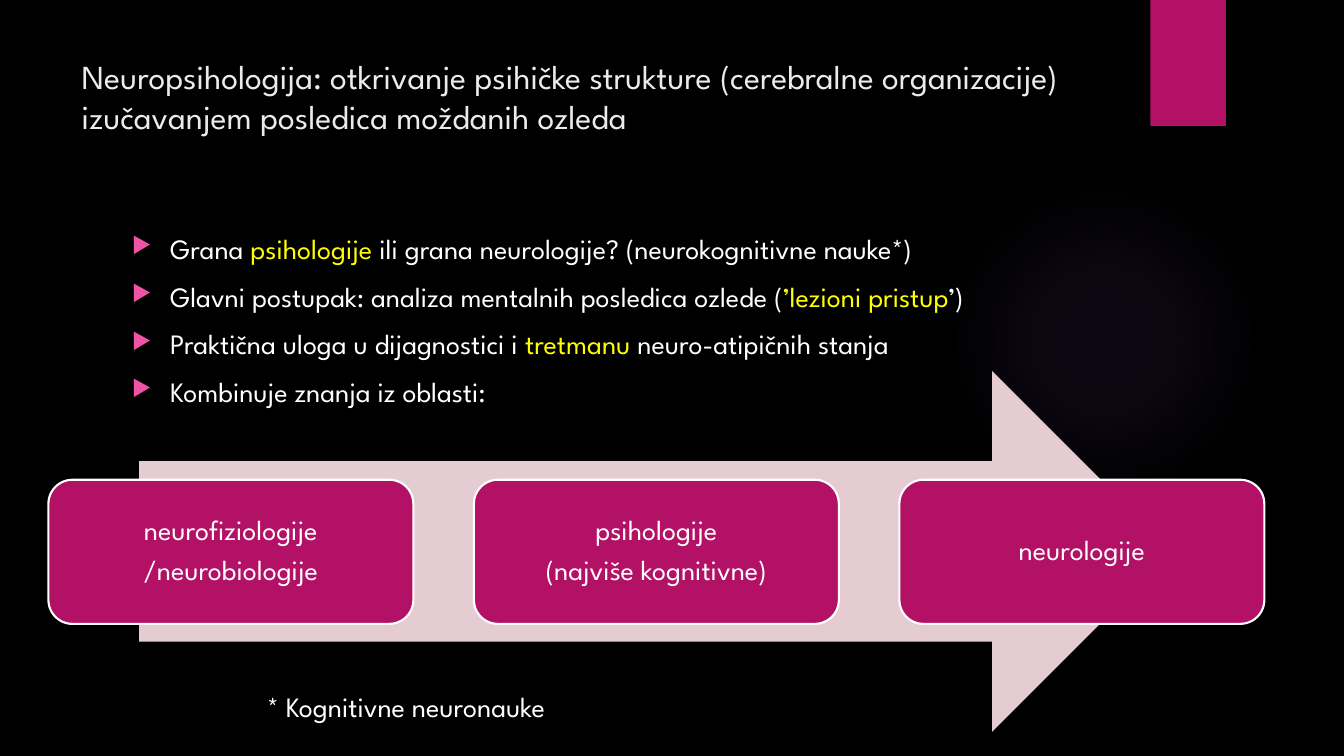
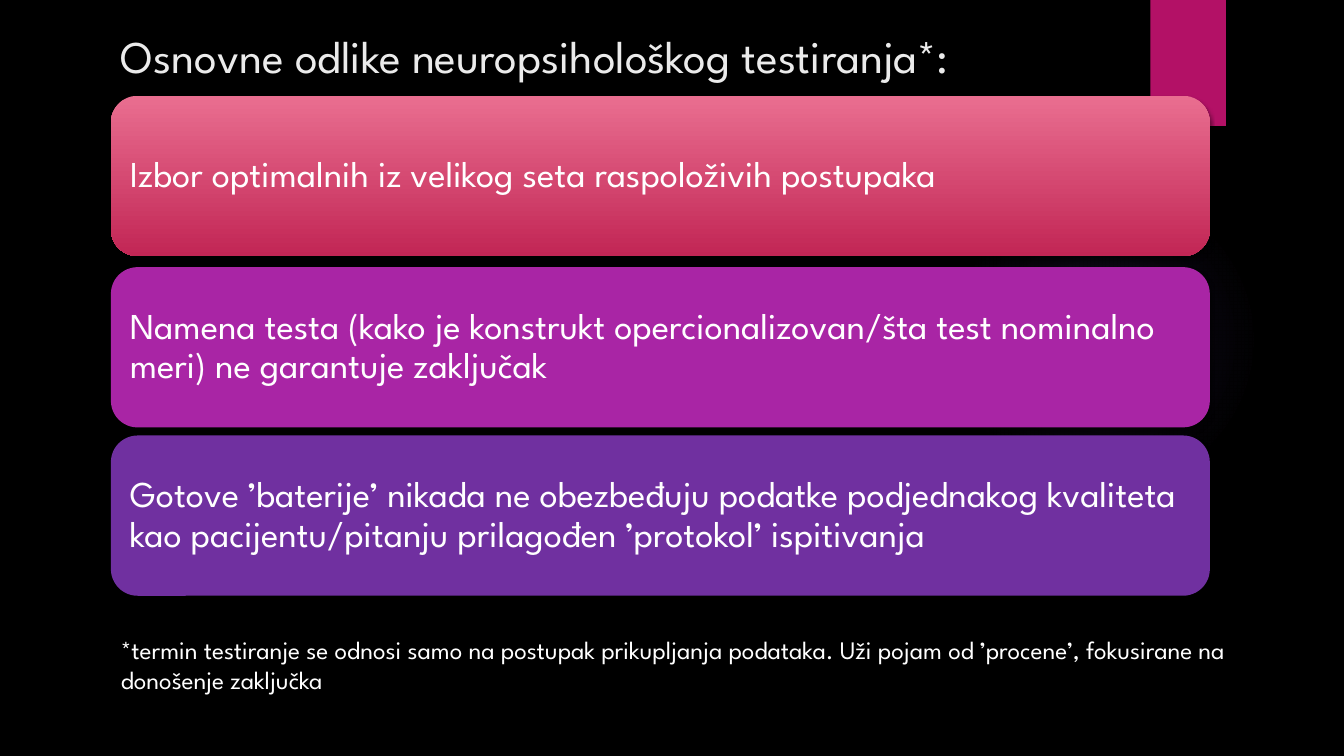
from lxml.etree import SubElement
from pptx import Presentation
from pptx.dml.color import RGBColor
from pptx.enum.shapes import MSO_SHAPE
from pptx.enum.text import MSO_ANCHOR, MSO_AUTO_SIZE, PP_ALIGN
from pptx.oxml import parse_xml
from pptx.oxml.ns import nsdecls, qn
from pptx.util import Inches, Pt

FONT = "League Spartan"
BLACK, WHITE, TITLE_GREY, YELLOW = "000000", "FFFFFF", "EBEBEB", "FFFF00"
MAGENTA, PINK, PALE_PINK, VIOLET = "B31166", "EF53A5", "E5CCD3", "9B6BF2"

BULLETS = [
    "Grana |psihologije| ili grana neurologije? (neurokognitivne nauke*)",
    "Glavni postupak: analiza mentalnih posledica ozlede (|’lezioni pristup|’)",
    "Praktična uloga u dijagnostici i |tretmanu| neuro-atipičnih stanja",
    "Kombinuje znanja iz oblasti:",
]
FIELDS = [
    "neurofiziologije\n/neurobiologije",
    "psihologije\n(najviše kognitivne)",
    "neurologije",
]
FEATURES = [
    (0.95, ["E96E90", "C22655"],
     "Izbor optimalnih iz velikog seta raspoloživih postupaka"),
    (2.65, ["A925A5"],
     "Namena testa (kako je konstrukt opercionalizovan/šta test nominalno "
     "meri) ne garantuje zaključak"),
    (4.32, ["7030A0"],
     "Gotove ’baterije’ nikada ne obezbeđuju podatke podjednakog kvaliteta "
     "kao pacijentu/pitanju prilagođen ’protokol’ ispitivanja"),
]


def rgb(value):
    """Return the colour for a hex string."""
    return RGBColor.from_string(value)


def style(font, size, color=WHITE):
    """Give a font the deck's typeface with a size and colour."""
    font.name = FONT
    font.size = Pt(size)
    font.color.rgb = rgb(color)


def add_block(slide, preset, at, colors, outline=None, shadow=False):
    """Add a preset shape with a plain or two-stop vertical fill."""
    block = slide.shapes.add_shape(preset, *map(Inches, at))
    block.shadow.inherit = False
    if len(colors) == 1:
        block.fill.solid()
        block.fill.fore_color.rgb = rgb(colors[0])
    else:
        block.fill.gradient()
        block.fill.gradient_angle = 270
        for stop, color in zip(block.fill.gradient_stops, colors):
            stop.color.rgb = rgb(color)
    if outline:
        block.line.color.rgb = rgb(outline)
        block.line.width = Pt(1.5)
    else:
        block.line.fill.background()
    if shadow:
        effects = block.element.spPr.find(qn("a:effectLst"))
        effects.append(parse_xml(
            f'<a:outerShdw {nsdecls("a")} blurRad="{Pt(3)}" dist="{Pt(2)}" '
            f'dir="5400000" rotWithShape="0"><a:srgbClr val="{BLACK}">'
            '<a:alpha val="45000"/></a:srgbClr></a:outerShdw>'))
    return block


def write_card(card, text, size, inset, align):
    """Write vertically centred text inside a rounded card."""
    frame = card.text_frame
    frame.word_wrap = True
    frame.vertical_anchor = MSO_ANCHOR.MIDDLE
    frame.margin_left = frame.margin_right = Inches(inset)
    frame.margin_top = frame.margin_bottom = Inches(inset)
    frame.text = text
    for index, paragraph in enumerate(frame.paragraphs):
        paragraph.alignment = align
        paragraph.line_spacing = 0.9
        if index:
            paragraph.space_before = Pt(size * 0.35)
        style(paragraph.font, size)


def add_note(slide, at, text, size, wrap=True):
    """Add a plain white footnote."""
    note = slide.shapes.add_textbox(*map(Inches, at))
    note.text_frame.word_wrap = wrap
    note.text_frame.text = text
    style(note.text_frame.paragraphs[0].font, size)


def add_bullets(slide, at, items, size):
    """Add a bullet list; text between bars is highlighted."""
    bullets = slide.shapes.add_textbox(*map(Inches, at))
    frame = bullets.text_frame
    frame.word_wrap = True
    for index, item in enumerate(items):
        paragraph = frame.add_paragraph() if index else frame.paragraphs[0]
        props = paragraph._p.get_or_add_pPr()
        props.set("marL", str(Inches(0.38)))
        props.set("indent", str(-Inches(0.38)))
        color = SubElement(props, qn("a:buClr"))
        SubElement(color, qn("a:srgbClr"), val=PINK)
        SubElement(props, qn("a:buSzPct"), val="80000")
        SubElement(props, qn("a:buChar"), char="▶")
        if index:
            paragraph.space_before = Pt(10)
        for part, text in enumerate(item.split("|")):
            run = paragraph.add_run()
            run.text = text
            style(run.font, size, YELLOW if part % 2 else WHITE)


def decorate_layout(layout, slide):
    """Put the background, the glow and the ribbon on the layout."""
    layout.background.fill.solid()
    layout.background.fill.fore_color.rgb = rgb(BLACK)
    glow = add_block(slide, MSO_SHAPE.OVAL, (9.41, 1.83, 3.08, 3.08), [VIOLET])
    stops = "".join(
        f'<a:gs pos="{position}000"><a:srgbClr val="{VIOLET}">'
        f'<a:alpha val="{alpha}000"/></a:srgbClr></a:gs>'
        for position, alpha in [(0, 7), (36, 6), (69, 0), (100, 0)])
    solid = glow.element.spPr.find(qn("a:solidFill"))
    solid.getparent().replace(solid, parse_xml(
        f'<a:gradFill {nsdecls("a")}><a:gsLst>{stops}</a:gsLst>'
        '<a:path path="circle"><a:fillToRect l="50000" t="50000" '
        'r="50000" b="50000"/></a:path></a:gradFill>'))
    ribbon = add_block(slide, MSO_SHAPE.RECTANGLE, (11.41, 0, 0.75, 1.25),
                       [MAGENTA], shadow=True)
    for decoration in (glow, ribbon):
        layout.shapes.element.append(decoration.element)


def add_titled_slide(deck, layout, at, text, size):
    """Add a slide and place its left-aligned title."""
    slide = deck.slides.add_slide(layout)
    title = slide.shapes.title
    title.left, title.top, title.width, title.height = map(Inches, at)
    frame = title.text_frame
    frame.text = text
    frame.word_wrap = True
    frame.auto_size = MSO_AUTO_SIZE.NONE
    frame.vertical_anchor = MSO_ANCHOR.TOP
    frame.paragraphs[0].alignment = PP_ALIGN.LEFT
    style(frame.paragraphs[0].runs[0].font, size, TITLE_GREY)
    return slide


def fill_definition(slide):
    """Fill the slide that defines neuropsychology."""
    add_bullets(slide, (1.21, 2.25, 10.27, 1.8), BULLETS, 20)
    add_block(slide, MSO_SHAPE.RIGHT_ARROW, (1.38, 3.68, 10.25, 3.58),
              [PALE_PINK])
    for index, field in enumerate(FIELDS):
        card = add_block(slide, MSO_SHAPE.ROUNDED_RECTANGLE,
                         (0.48 + index * 4.22, 4.76, 3.62, 1.43),
                         [MAGENTA], outline=WHITE)
        write_card(card, field, 20, 0.08, PP_ALIGN.CENTER)
    add_note(slide, (2.55, 6.79, 3.55, 0.44), "* Kognitivne neuronauke", 20,
             wrap=False)


def fill_testing(slide):
    """Fill the slide on the features of testing."""
    for top, colors, feature in FEATURES:
        card = add_block(slide, MSO_SHAPE.ROUNDED_RECTANGLE,
                         (1.1, top, 10.9, 1.59), colors, shadow=True)
        write_card(card, feature, 26, 0.11, PP_ALIGN.LEFT)
    add_note(slide, (1.1, 6.24, 11.8, 0.71),
             "*termin testiranje se odnosi samo na postupak prikupljanja "
             "podataka. Uži pojam od ’procene’, fokusirane na donošenje "
             "zaključka", 18)


def main():
    """Build and save the deck."""
    deck = Presentation()
    deck.slide_width, deck.slide_height = Inches(13.33), Inches(7.5)
    layout = deck.slide_layouts[5]
    definition = add_titled_slide(
        deck, layout, (0.71, 0.5, 11.08, 1.53),
        "Neuropsihologija: otkrivanje psihičke strukture (cerebralne "
        "organizacije) izučavanjem posledica moždanih ozleda", 24)
    decorate_layout(layout, definition)
    fill_definition(definition)
    testing = add_titled_slide(
        deck, layout, (1.1, 0.29, 10.05, 0.6),
        "Osnovne odlike neuropsihološkog testiranja*:", 32.4)
    testing.shapes.title.text_frame.paragraphs[0].line_spacing = 0.9
    fill_testing(testing)
    deck.save("out.pptx")


if __name__ == "__main__":
    main()
